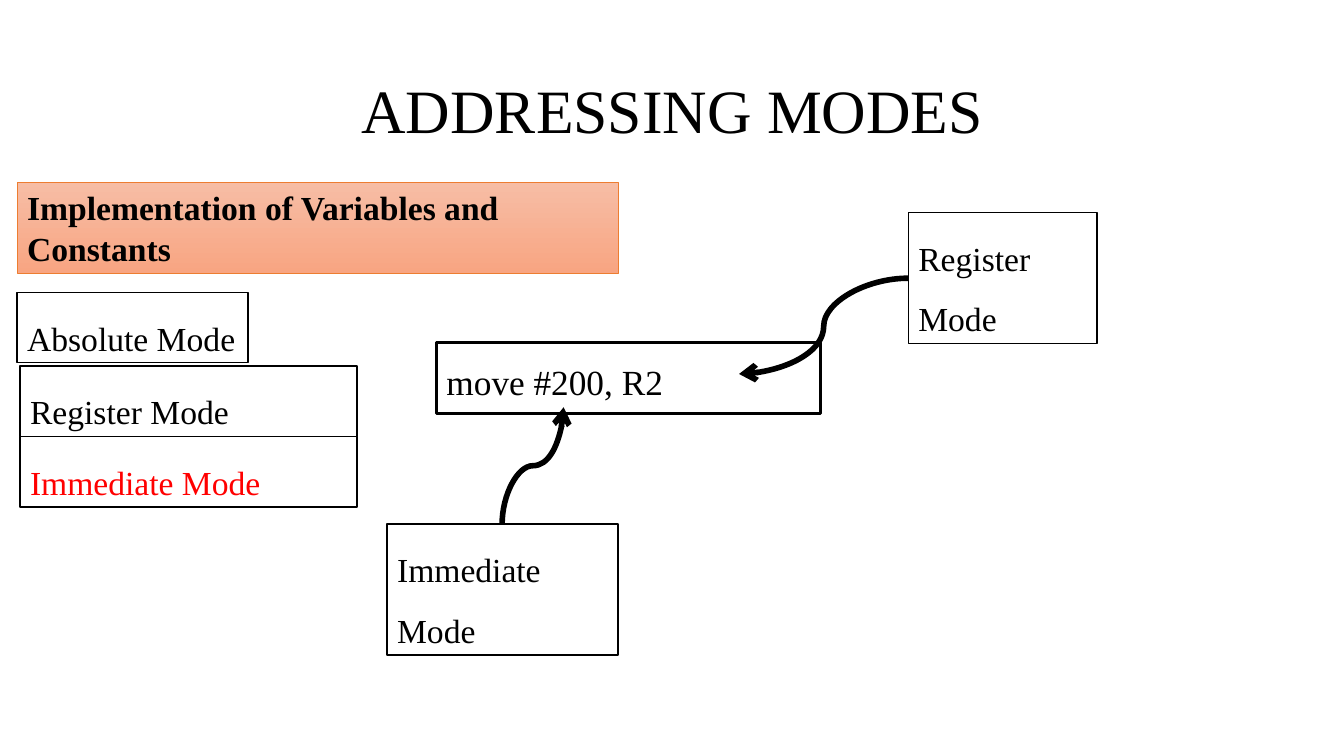
from dataclasses import dataclass

import pptx
import pptx.dml.color
import pptx.enum.dml
import pptx.enum.shapes
import pptx.enum.text
import pptx.oxml
import pptx.oxml.ns
import pptx.shapes.autoshape
import pptx.shapes.connector
import pptx.slide
import pptx.util
from pptx.util import Inches

COLORS = {
    "ink": "000000", "paper": "FFFFFF", "highlight": "FF0000", "banner edge": "ED7D31",
    "banner top": "F7BDA5", "banner bottom": "F8A582",
}
FONT = "Times New Roman"


@dataclass
class Box:
    text: str
    left: float
    top: float
    width: float
    height: float
    size: float = 24
    spacing: float = 1.5
    space_before: float = 0
    color: str = "ink"
    bold: bool = False
    fill: str | None = "paper"
    edge: str | None = "ink"
    edge_width: float = 1
    align: pptx.enum.text.PP_ALIGN = pptx.enum.text.PP_ALIGN.LEFT
    anchor: pptx.enum.text.MSO_ANCHOR = pptx.enum.text.MSO_ANCHOR.TOP


@dataclass
class Arrow:
    source: pptx.shapes.autoshape.Shape
    side: int
    start: tuple[float, float]
    end: tuple[float, float]


def rgb(name: str) -> pptx.dml.color.RGBColor:
    return pptx.dml.color.RGBColor.from_string(COLORS[name])


def apply(target: object, formats: dict[str, object]) -> None:
    for attribute, value in formats.items():
        setattr(target, attribute, value)


def draw_box(slide: pptx.slide.Slide, box: Box) -> pptx.shapes.autoshape.Shape:
    shape = slide.shapes.add_shape(
        pptx.enum.shapes.MSO_SHAPE.RECTANGLE,
        Inches(box.left), Inches(box.top), Inches(box.width), Inches(box.height))
    shape.shadow.inherit = False
    if box.fill:
        shape.fill.solid()
        shape.fill.fore_color.rgb = rgb(box.fill)
    else:
        shape.fill.background()
    if box.edge:
        shape.line.color.rgb = rgb(box.edge)
        shape.line.width = pptx.util.Pt(box.edge_width)
    else:
        shape.line.fill.background()

    frame = shape.text_frame
    apply(frame, {"word_wrap": True, "vertical_anchor": box.anchor})
    paragraph = frame.paragraphs[0]
    apply(paragraph, {"alignment": box.align, "line_spacing": box.spacing,
                      "space_before": pptx.util.Pt(box.space_before)})
    run = paragraph.add_run()
    run.text = box.text
    apply(run.font, {"name": FONT, "size": pptx.util.Pt(box.size), "bold": box.bold})
    run.font.color.rgb = rgb(box.color)
    return shape


def shade_banner(banner: pptx.shapes.autoshape.Shape) -> None:
    """Fill from the lighter tone at the top to the darker at the bottom."""
    banner.fill.gradient()
    banner.fill.gradient_angle = 270
    for stop, tone, position in zip(
            banner.fill.gradient_stops, ("banner top", "banner bottom"), (0, 1)):
        stop.color.rgb = rgb(tone)
        stop.position = position


def draw_arrow(slide: pptx.slide.Slide, arrow: Arrow) -> pptx.shapes.connector.Connector:
    (x1, y1), (x2, y2) = arrow.start, arrow.end
    curve = slide.shapes.add_connector(
        pptx.enum.shapes.MSO_CONNECTOR.CURVE, Inches(x1), Inches(y1), Inches(x2), Inches(y2))
    curve.begin_connect(arrow.source, arrow.side)
    if arrow.side in (0, 2):
        # A curve leaves horizontally unless its frame is turned a quarter.
        width, height = abs(y2 - y1), abs(x2 - x1)
        apply(curve, {"left": Inches((x1 + x2 - width) / 2),
                      "top": Inches((y1 + y2 - height) / 2),
                      "width": Inches(width), "height": Inches(height)})
        apply(curve._element.spPr.xfrm, {"rot": 270, "flipH": False, "flipV": False})
    curve.line.color.rgb = rgb("ink")
    curve.line.width = pptx.util.Pt(4)
    head = pptx.oxml.parse_xml(
        f'<a:tailEnd {pptx.oxml.ns.nsdecls("a")} type="arrow"/>')
    curve.line._get_or_add_ln().append(head)
    curve._element.spPr.append(
        pptx.oxml.parse_xml(f'<a:effectLst {pptx.oxml.ns.nsdecls("a")}/>'))
    return curve


def main() -> None:
    presentation = pptx.Presentation()
    apply(presentation, {"slide_width": Inches(13.33), "slide_height": Inches(7.5)})
    slide = presentation.slides.add_slide(presentation.slide_layouts[6])

    draw_box(slide, Box("ADDRESSING MODES", 0.92, 0.4, 11.5, 1.45, size=44, spacing=0.9,
                        fill=None, edge=None, align=pptx.enum.text.PP_ALIGN.CENTER,
                        anchor=pptx.enum.text.MSO_ANCHOR.MIDDLE))
    draw_box(slide, Box("move #200, R2", 4.33, 3.4, 3.81, 0.7, size=25.2, spacing=1.3,
                        space_before=10, fill=None, edge_width=2.25))
    shade_banner(draw_box(slide, Box(
        "Implementation of Variables and Constants", 0.17, 1.81, 5.96, 0.9,
        spacing=1, bold=True, edge="banner edge", edge_width=0.5)))

    register_label = draw_box(slide, Box("Register Mode", 9.01, 2.11, 1.87, 1.3))
    immediate_label = draw_box(slide, Box("Immediate Mode", 3.84, 5.2, 2.29, 1.3))
    for arrow in (Arrow(register_label, 1, (9.01, 2.76), (7.33, 3.71)),
                  Arrow(immediate_label, 0, (4.98, 5.2), (5.59, 4.04))):
        draw_arrow(slide, arrow)

    for mode in (Box("Absolute Mode", 0.17, 2.9, 2.29, 0.7),
                 Box("Register Mode", 0.2, 3.63, 3.34, 0.7),
                 Box("Immediate Mode", 0.2, 4.33, 3.34, 0.7, color="highlight")):
        draw_box(slide, mode)

    presentation.save("out.pptx")


if __name__ == "__main__":
    main()
